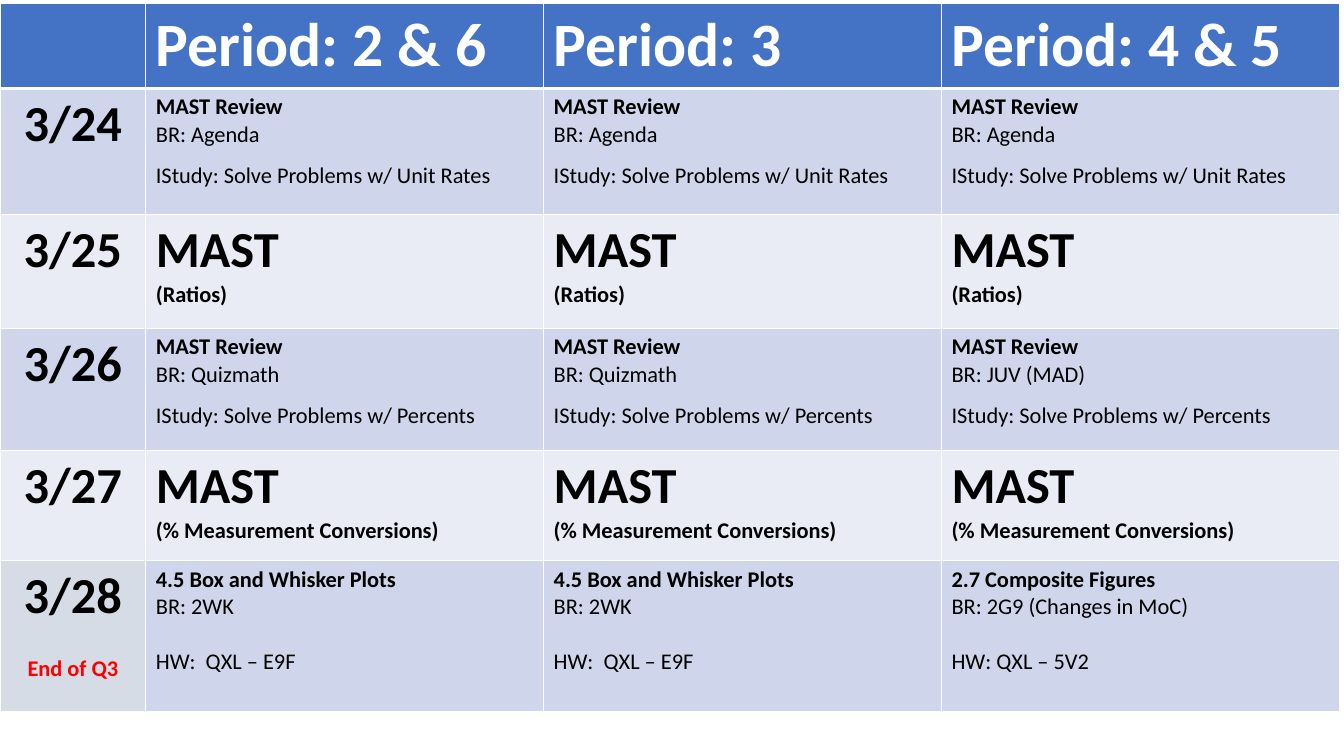
import lxml.etree
import pptx
import pptx.dml.color
import pptx.enum.text
import pptx.oxml.ns
import pptx.util

RGB = pptx.dml.color.RGBColor
WHITE = RGB(0xFF, 0xFF, 0xFF)
BLACK = RGB(0x00, 0x00, 0x00)
RED = RGB(0xFF, 0x00, 0x00)
HEADER_BLUE = RGB(0x44, 0x72, 0xC4)
BAND_DARK = RGB(0xCF, 0xD5, 0xEA)
BAND_LIGHT = RGB(0xE9, 0xEB, 0xF5)
QUARTER_END = RGB(0xD6, 0xDC, 0xE5)

# Percent of the slide's width and height
COLUMN_SHARES = [10.85] + [29.6] * 3
ROW_SHARES = [10.9, 16.7, 15.05, 16.1, 14.65, 20]
TABLE_TOP = 0.4

HEADER_SIZE, LARGE_SIZE, BODY_SIZE = 44, 36, 16
SMALL_GAP, LINE_GAP = 9.8, 19.5  # points above a paragraph


def line(text, size=BODY_SIZE, bold=False, color=BLACK, gap=0):
    return {"text": text, "size": size, "bold": bold, "color": color, "gap": gap}


def lesson(title, bell_ringer, task, gap):
    return [line(title, bold=True), line(f"BR: {bell_ringer}"), line(task, gap=gap)]


def review(bell_ringer, topic):
    return lesson("MAST Review", bell_ringer, f"IStudy: Solve Problems w/ {topic}", SMALL_GAP)


def test(topic):
    return [line("MAST", LARGE_SIZE, True), line(f"({topic})", bold=True)]


def date(day):
    return [line(day, LARGE_SIZE, True)]


class Planner:
    font = "Calibri"

    def __init__(self, deck):
        self.deck = deck
        self.slide = deck.slides.add_slide(deck.slide_layouts[6])

    def across(self, percent):
        return round(self.deck.slide_width * percent / 100)

    def down(self, percent):
        return round(self.deck.slide_height * percent / 100)

    def table(self, top, column_shares, row_shares):
        frame = self.slide.shapes.add_table(
            len(row_shares), len(column_shares), 0, self.down(top),
            self.across(sum(column_shares)), self.down(sum(row_shares)))
        for column, share in zip(frame.table.columns, column_shares):
            column.width = self.across(share)
        for row, share in zip(frame.table.rows, row_shares):
            row.height = self.down(share)
        return frame.table

    def cell(self, cell, lines, fill, centered=False, bottom_width=1):
        cell.fill.solid()
        cell.fill.fore_color.rgb = fill
        self.borders(cell, {"lnL": 1, "lnR": 1, "lnT": 1, "lnB": bottom_width})
        for index, content in enumerate(lines):
            frame = cell.text_frame
            para = frame.add_paragraph() if index else frame.paragraphs[0]
            if content["gap"]:
                para.space_before = pptx.util.Pt(content["gap"])
            if centered:
                para.alignment = pptx.enum.text.PP_ALIGN.CENTER
            self.span(para, content)

    def span(self, para, content):
        span = para.add_run()
        span.text = content["text"]
        span.font.name = self.font
        span.font.size = pptx.util.Pt(content["size"])
        span.font.bold = content["bold"]
        span.font.color.rgb = content["color"]

    def borders(self, cell, widths):
        qn = pptx.oxml.ns.qn
        properties = cell._tc.get_or_add_tcPr()
        # Borders must come before the fill
        for index, (side, width) in enumerate(widths.items()):
            border = lxml.etree.Element(qn(f"a:{side}"), w=str(pptx.util.Pt(width)))
            solid = lxml.etree.SubElement(border, qn("a:solidFill"))
            lxml.etree.SubElement(solid, qn("a:srgbClr"), val=str(WHITE))
            properties.insert(index, border)


def main():
    deck = pptx.Presentation()
    deck.slide_width = pptx.util.Inches(13.33)
    deck.slide_height = pptx.util.Inches(7.5)
    planner = Planner(deck)
    table = planner.table(TABLE_TOP, COLUMN_SHARES, ROW_SHARES)

    # Header row
    periods = ["2 & 6", "3", "4 & 5"]
    headers = [[]] + [[line(f"Period: {period}", HEADER_SIZE, True, WHITE)]
                      for period in periods]
    for column, lines in enumerate(headers):
        planner.cell(table.cell(0, column), lines, HEADER_BLUE, bottom_width=3)

    # One row per day: the date, then the plan for each period
    box_plots = lesson("4.5 Box and Whisker Plots", "2WK", "HW:  QXL – E9F", LINE_GAP)
    figures = lesson("2.7 Composite Figures", "2G9 (Changes in MoC)",
                     "HW: QXL – 5V2", LINE_GAP)
    quarter_end = line("End of Q3", bold=True, color=RED, gap=LINE_GAP)
    days = [
        [date("3/24")] + [review("Agenda", "Unit Rates")] * 3,
        [date("3/25")] + [test("Ratios")] * 3,
        [date("3/26")] + [review(starter, "Percents")
                          for starter in ("Quizmath", "Quizmath", "JUV (MAD)")],
        [date("3/27")] + [test("% Measurement Conversions")] * 3,
        [date("3/28") + [quarter_end], box_plots, box_plots, figures],
    ]
    for row, day in enumerate(days, start=1):
        band = BAND_DARK if row % 2 else BAND_LIGHT
        for column, lines in enumerate(day):
            is_quarter_end = column == 0 and row == len(days)
            fill = QUARTER_END if is_quarter_end else band
            planner.cell(table.cell(row, column), lines, fill, centered=column == 0)

    deck.save("out.pptx")


if __name__ == "__main__":
    main()
